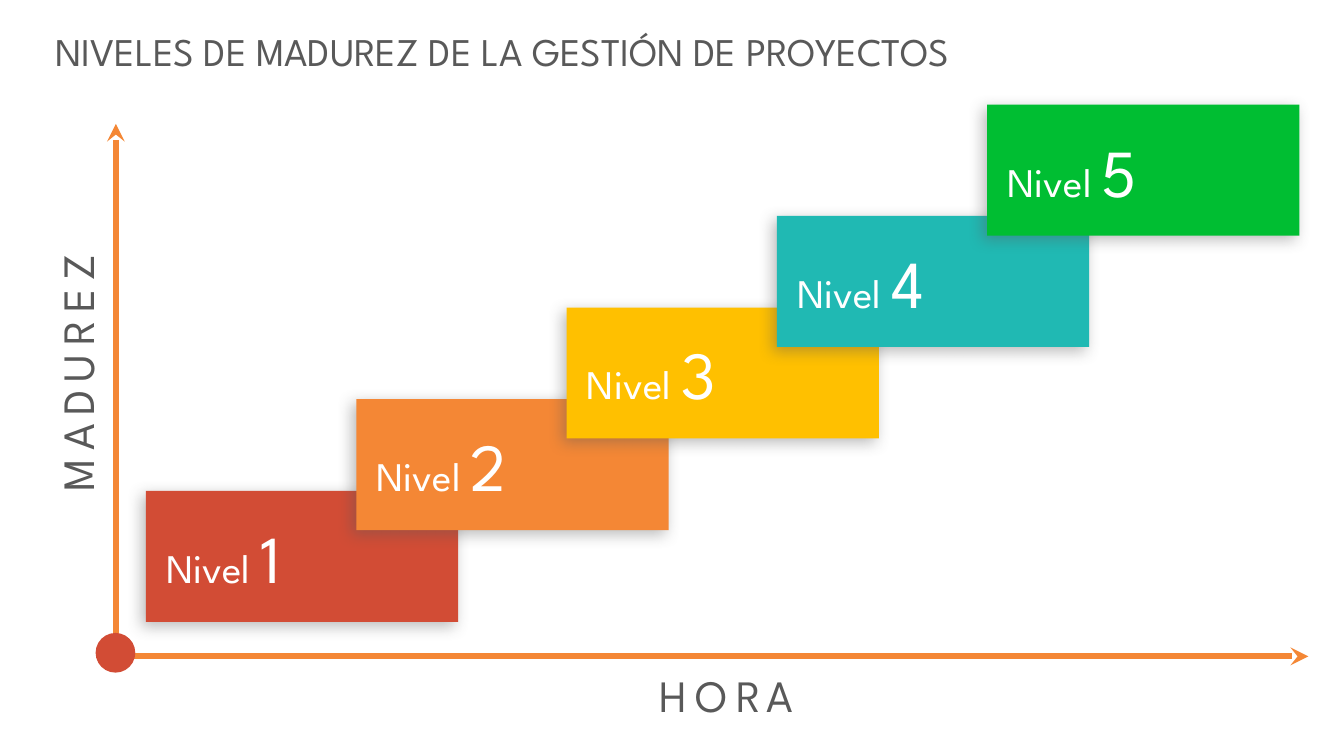
from lxml import etree
from pptx import Presentation
from pptx.dml.color import RGBColor
from pptx.enum import shapes, text
from pptx.oxml import ns
from pptx.util import Cm, Pt

HUES = {
    "text": "595959",
    "white": "FFFFFF",
    "red": "D24C35",
    "orange": "F48735",
    "yellow": "FFC000",
    "teal": "20B9B3",
    "green": "00BE32",
}
FONT = "League Spartan"
LEVELS = ["red", "orange", "yellow", "teal", "green"]


def hue(name):
    return RGBColor.from_string(HUES[name])


def put(item, vals):
    for key, val in vals.items():
        setattr(item, key, val)


def add_run(para, words, size, color, gap=0):
    run = para.add_run()
    run.text = words
    put(run.font, {"name": FONT, "size": Pt(size)})
    run.font.color.rgb = hue(color)
    if gap:
        run.font._element.set("spc", str(gap * 100))


def add_shade(shape):
    """Give the shape a soft shadow towards the lower left."""
    fx = shape._element.spPr.find(ns.qn("a:effectLst"))
    shade = etree.SubElement(fx, ns.qn("a:outerShdw"), blurRad=str(Pt(11)),
                             dist=str(Pt(4)), dir=str(135 * 60000),
                             algn="tr", rotWithShape="0")
    color = etree.SubElement(shade, ns.qn("a:srgbClr"), val=HUES["text"])
    etree.SubElement(color, ns.qn("a:alpha"), val="40000")


def set_title(slide, words):
    title = slide.shapes.title
    put(title, {"left": Cm(1.14), "top": Cm(0.56),
                "width": Cm(28.32), "height": Cm(1.45)})
    frame = title.text_frame
    put(frame, {"word_wrap": True, "auto_size": text.MSO_AUTO_SIZE.NONE,
                "vertical_anchor": text.MSO_ANCHOR.TOP})
    para = frame.paragraphs[0]
    para.alignment = text.PP_ALIGN.LEFT
    add_run(para, words, 28, "text")


def add_solid(slide, kind, box, color):
    shape = slide.shapes.add_shape(kind, *map(Cm, box))
    shape.shadow.inherit = False
    shape.fill.solid()
    shape.fill.fore_color.rgb = hue(color)
    shape.line.fill.background()
    return shape


def add_level(slide, num, left, top, color):
    kind = shapes.MSO_SHAPE.RECTANGLE
    card = add_solid(slide, kind, (left, top, 7.87, 3.3), color)
    add_shade(card)
    frame = card.text_frame
    put(frame, {"margin_left": Cm(0.51), "margin_top": 0, "margin_right": 0,
                "margin_bottom": 0, "word_wrap": False,
                "vertical_anchor": text.MSO_ANCHOR.MIDDLE})
    para = frame.paragraphs[0]
    para.alignment = text.PP_ALIGN.LEFT
    add_run(para, "Nivel ", 29, "white")
    add_run(para, str(num), 48, "white")


def add_axis(slide, start, end):
    kind = shapes.MSO_CONNECTOR.STRAIGHT
    axis = slide.shapes.add_connector(kind, *map(Cm, start + end))
    axis.line.color.rgb = hue("orange")
    axis.line.width = Pt(4.25)
    etree.SubElement(axis.line._get_or_add_ln(), ns.qn("a:tailEnd"),
                     type="stealth")
    etree.SubElement(axis._element.spPr, ns.qn("a:effectLst"))


def add_label(slide, words, left, top, turn=0):
    box = slide.shapes.add_textbox(Cm(left), Cm(top), Cm(7.82), Cm(1.63))
    box.rotation = turn
    box.text_frame.word_wrap = True
    para = box.text_frame.paragraphs[0]
    para.alignment = text.PP_ALIGN.CENTER
    add_run(para, words, 32, "text", gap=6)


def main():
    deck = Presentation()
    put(deck, {"slide_width": Cm(33.87), "slide_height": Cm(19.05)})
    slide = deck.slides.add_slide(deck.slide_layouts[5])
    set_title(slide, "NIVELES DE MADUREZ DE LA GESTIÓN DE PROYECTOS")

    # Stairs of levels: even steps, with a taller last one
    for step, color in enumerate(LEVELS):
        lift = 0.49 if step == len(LEVELS) - 1 else 0
        add_level(slide, step + 1, 3.68 + 5.3 * step,
                  12.37 - 2.31 * step - lift, color)

    # Axes and their origin
    root = (2.92, 16.54)
    add_axis(slide, root, (2.92, 3.12))
    add_axis(slide, root, (32.97, 16.54))
    add_solid(slide, shapes.MSO_SHAPE.OVAL, (2.41, 15.95, 1, 1), "red")

    # Axis names
    add_label(slide, "MADUREZ", -1.96, 8.59, turn=270)
    add_label(slide, "HORA", 14.4, 16.69)

    deck.save("out.pptx")


if __name__ == "__main__":
    main()
